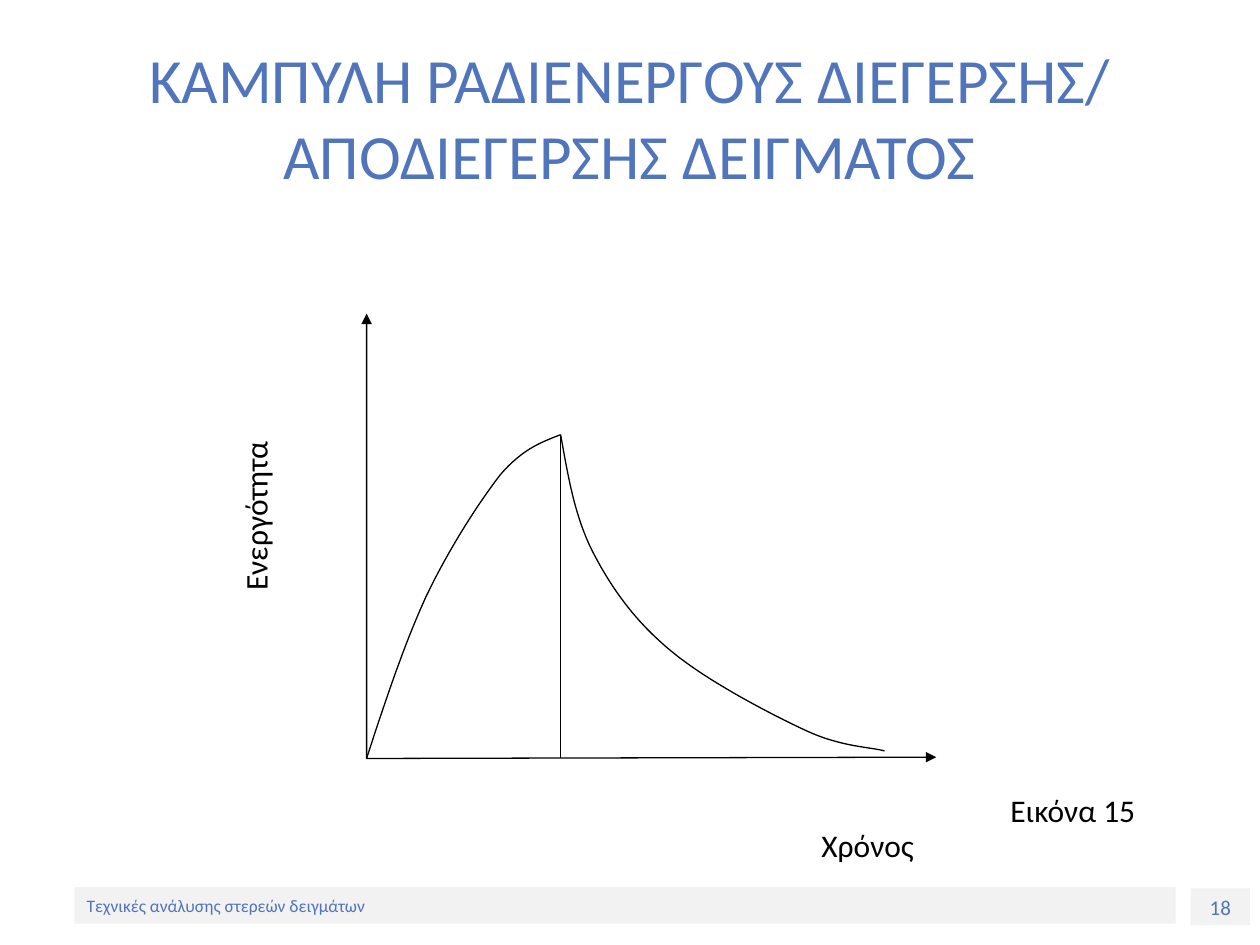
from lxml.etree import SubElement
from pptx import Presentation
from pptx.dml.color import RGBColor
from pptx.enum.shapes import MSO_CONNECTOR, MSO_SHAPE
from pptx.enum.text import MSO_ANCHOR, MSO_AUTO_SIZE, PP_ALIGN
from pptx.oxml.ns import qn
from pptx.util import Pt

PX = 9144  # 100 px to the inch
BLUE, GREY, BLACK, WHITE = "5075BC", "F2F2F2", "000000", "FFFFFF"
STEPS = 16


def color(code):
    return RGBColor.from_string(code)


def trace(shapes, points):
    """Draw an open black outline through points given in px."""
    spots = [(round(x * PX), round(y * PX)) for x, y in points]
    pen = shapes.build_freeform(*spots[0], scale=1.0)
    pen.add_line_segments(spots[1:], close=False)
    line = pen.convert_to_shape()
    line.shadow.inherit = False
    line.fill.background()
    line.line.color.rgb = color(BLACK)
    line.line.width = Pt(0.75)
    return line


prs = Presentation()
prs.slide_width, prs.slide_height = 1000 * PX, 750 * PX
slide = prs.slides.add_slide(prs.slide_layouts[6])

# Text, place, size, colour, fill, alignment, anchor, rotation
LEFT, MID = PP_ALIGN.LEFT, PP_ALIGN.CENTER
TOP, HALF = MSO_ANCHOR.TOP, MSO_ANCHOR.MIDDLE
texts = [
    ("18", (945, 705, 47, 29), 12, BLUE, GREY, MID, TOP, 0),
    ("Τεχνικές ανάλυσης στερεών δειγμάτων", (59, 704, 874, 29), 10, BLUE, GREY, LEFT, HALF, 0),
    ("ΚΑΜΠΥΛΗ ΡΑΔΙΕΝΕΡΓΟΥΣ ΔΙΕΓΕΡΣΗΣ/ ΑΠΟΔΙΕΓΕΡΣΗΣ ΔΕΙΓΜΑΤΟΣ", (50, 30, 900, 125), 36, BLUE, None, MID, HALF, 0),
    ("Ενεργότητα", (127, 383, 151, 40), 18, BLACK, None, LEFT, TOP, 270),
    ("Χρόνος", (642, 651, 141, 40), 18, BLACK, None, LEFT, TOP, 0),
    ("Εικόνα 15", (792, 619, 126, 47), 18, BLACK, WHITE, LEFT, HALF, 0),
]
for text, place, size, ink, fill, align, anchor, turn in texts:
    place = [n * PX for n in place]
    if fill:
        box = slide.shapes.add_shape(MSO_SHAPE.RECTANGLE, *place)
        box.shadow.inherit = False
        box.fill.solid()
        box.fill.fore_color.rgb = color(fill)
        box.line.fill.background()
    else:
        box = slide.shapes.add_textbox(*place)
    box.rotation = turn
    frame = box.text_frame
    frame.text = text
    frame.word_wrap = True
    frame.auto_size = MSO_AUTO_SIZE.NONE
    frame.vertical_anchor = anchor
    para = frame.paragraphs[0]
    para.alignment = align
    font = para.runs[0].font
    font.name, font.size = "Calibri", Pt(size)
    font.color.rgb = color(ink)

# Axes with an arrowhead at each end
graph = slide.shapes.add_group_shape().shapes
axes = trace(graph, [(291, 249), (291, 602), (743, 601)])
for end in ("a:headEnd", "a:tailEnd"):
    SubElement(axes.line._get_or_add_ln(), qn(end), type="triangle")

# Each curve: a start, then two controls and an end for every arc
rise = [(291, 602), (306, 556), (321, 511), (338, 474), (356, 436),
        (380, 399), (397, 377), (415, 356), (430, 351), (445, 345)]
decay = [(445, 345), (451, 378), (456, 410), (471, 439), (486, 468),
         (505, 494), (533, 517), (562, 541), (612, 567), (640, 580),
         (668, 593), (692, 593), (702, 596)]
for curve in (rise, decay):
    points = [curve[0]]
    for i in range(0, len(curve) - 1, 3):
        arc = curve[i:i + 4]
        for step in range(1, STEPS + 1):
            t = step / STEPS
            u = 1 - t
            parts = (u ** 3, 3 * u * u * t, 3 * u * t * t, t ** 3)
            points.append([sum(w * p[k] for w, p in zip(parts, arc)) for k in (0, 1)])
    trace(graph, points)

# Drop line from the peak to the time axis
drop = graph.add_connector(MSO_CONNECTOR.STRAIGHT, 445 * PX, 345 * PX, 445 * PX, 602 * PX)
drop.line.color.rgb = color(BLACK)
drop.line.width = Pt(0.75)
SubElement(drop._element.spPr, qn("a:effectLst"))

prs.save("out.pptx")
